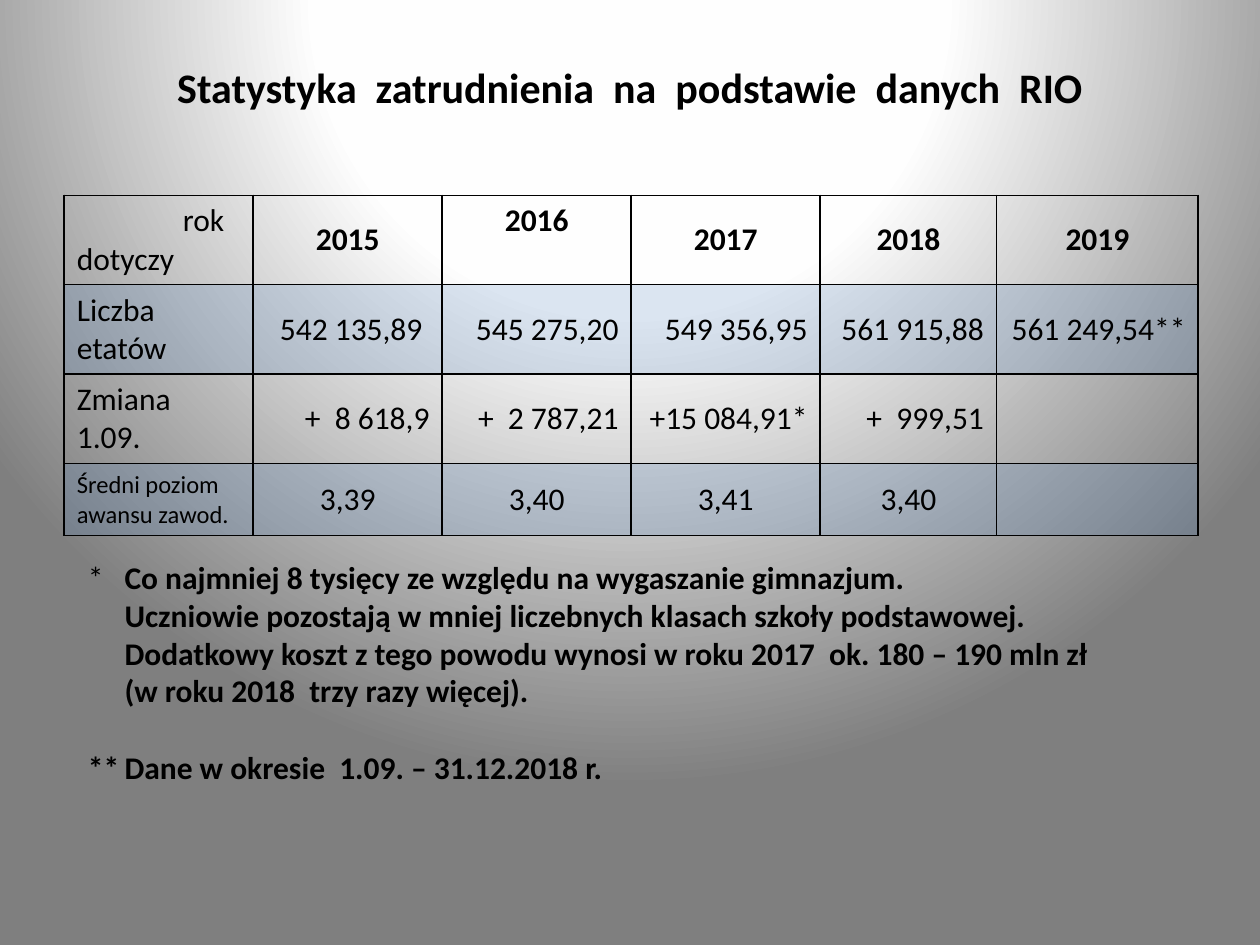
from lxml import etree
from pptx import Presentation
from pptx.dml.color import RGBColor
from pptx.enum.text import MSO_ANCHOR as Anchor, PP_ALIGN as Align
from pptx.oxml import parse_xml
from pptx.oxml.ns import nsdecls, qn
from pptx.util import Inches, Pt

BLACK = RGBColor(0x00, 0x00, 0x00)
BLUE = RGBColor(0x4F, 0x81, 0xBD)
WHITE = RGBColor(0xFF, 0xFF, 0xFF)
NEAR_WHITE = RGBColor(0xFE, 0xFE, 0xFE)
GRAY = RGBColor(0x7F, 0x7F, 0x7F)

HEADER = ["", "2015", "2016", "2017", "2018", "2019"]
JOBS = ["Liczba etatów", "542 135,89 ", "545 275,20", "549 356,95", "561 915,88", "561 249,54**"]
CHANGE = ["Zmiana\n1.09.", "+  8 618,9", "+  2 787,21", "+15 084,91*", "+  999,51", ""]
LEVEL = ["Średni poziom awansu zawod.", "3,39", "3,40", "3,41", "3,40", ""]
ROW_ALIGNS = [Align.CENTER, Align.RIGHT, Align.RIGHT, Align.CENTER]
NOTES = [
    ("*", "Co najmniej 8 tysięcy ze względu na wygaszanie gimnazjum."),
    ("", "Uczniowie pozostają w mniej liczebnych klasach szkoły podstawowej."),
    ("", "Dodatkowy koszt z tego powodu wynosi w roku 2017  ok. 180 – 190 mln zł"),
    ("", "(w roku 2018  trzy razy więcej)."),
    ("**", "Dane w okresie  1.09. – 31.12.2018 r."),
]


class Deck:
    font = "Calibri"
    size = 18

    def __init__(self, prs):
        self.s = prs.slides.add_slide(prs.slide_layouts[6])

    def style(self, font, size=None, bold=False):
        font.name = self.font
        font.size = Pt(size or self.size)
        font.bold = bold
        font.color.rgb = BLACK

    def background(self, stops):
        self.s.background.fill.gradient()
        old = self.s.element.find(".//" + qn("a:gradFill"))
        gs = "".join(f'<a:gs pos="{pos * 1000}"><a:srgbClr val="{color}"/></a:gs>'
                     for pos, color in stops)
        old.getparent().replace(old, parse_xml(
            f'<a:gradFill {nsdecls("a")} rotWithShape="1"><a:gsLst>{gs}</a:gsLst>'
            '<a:path path="circle"><a:fillToRect l="50000" t="-80000" r="50000" b="180000"/>'
            '</a:path></a:gradFill>'))

    def text_box(self, left, top, width, height, anchor=Anchor.TOP):
        sp = self.s.shapes.add_textbox(Inches(left), Inches(top), Inches(width), Inches(height))
        tf = sp.text_frame
        tf.word_wrap = True
        tf.vertical_anchor = anchor
        return tf

    def title(self, text):
        p = self.text_box(0.5, 0.3, 9, 0.77, Anchor.MIDDLE).paragraphs[0]
        p.text = text
        p.alignment = Align.CENTER
        self.style(p.font, 24, True)

    def notes(self, notes, hang):
        tf = self.text_box(0.6, 4.38, 8.9, 1.92)
        for i, (mark, text) in enumerate(notes):
            p = tf.paragraphs[0] if i == 0 else tf.add_paragraph()
            pPr = p._p.get_or_add_pPr()
            pPr.set("marL", str(Inches(hang)))
            pPr.set("indent", str(-Inches(hang) if mark else 0))
            if mark == "**":
                p.space_before = Pt(22)
            if mark:
                r = p.add_run()
                r.text = mark + "\t"
                self.style(r.font, bold=mark == "**")
            r = p.add_run()
            r.text = text
            self.style(r.font, bold=True)

    def table(self, left, top, cols, rows):
        tbl = self.s.shapes.add_table(len(rows), len(cols), Inches(left), Inches(top),
                                      Inches(sum(cols)), Inches(sum(rows))).table
        tbl.first_row = tbl.horz_banding = False
        for col, width in zip(tbl.columns, cols):
            col.width = Inches(width)
        for row, height in zip(tbl.rows, rows):
            row.height = Inches(height)
        return tbl

    def cell(self, cell, text, align, size=None, bold=False, anchor=Anchor.MIDDLE, tinted=False):
        cell.text = text
        cell.vertical_anchor = anchor
        for p in cell.text_frame.paragraphs:
            p.alignment = align
            self.style(p.font, size, bold)
        if tinted:
            cell.fill.solid()
            cell.fill.fore_color.rgb = BLUE
            color = cell._tc.tcPr.find(".//" + qn("a:srgbClr"))
            etree.SubElement(color, qn("a:alpha")).set("val", "20000")
        else:
            cell.fill.background()
        for i, side in enumerate("LRTB"):
            cell._tc.tcPr.insert(i, parse_xml(
                f'<a:ln{side} {nsdecls("a")} w="{Pt(1)}"><a:solidFill>'
                f'<a:srgbClr val="{BLACK}"/></a:solidFill></a:ln{side}>'))


def main():
    prs = Presentation()
    prs.slide_width, prs.slide_height = Inches(10), Inches(7.5)
    deck = Deck(prs)
    deck.background([(0, WHITE), (40, NEAR_WHITE), (100, GRAY)])
    deck.title("Statystyka  zatrudnienia  na  podstawie  danych  RIO")

    stats = deck.table(0.51, 1.55, [1.5, 1.5, 1.5, 1.5, 1.4, 1.6], [0.71, 0.71, 0.71, 0.57])
    for r, (values, align) in enumerate(zip([HEADER, JOBS, CHANGE, LEVEL], ROW_ALIGNS)):
        for c, text in enumerate(values):
            deck.cell(stats.cell(r, c), text, align if c else Align.LEFT,
                      size=14 if (r, c) == (3, 0) else None, bold=r == 0,
                      anchor=Anchor.TOP if text == "2016" else Anchor.MIDDLE,
                      tinted=r % 2 == 1)

    deck.notes(NOTES, 0.29)

    corner = deck.table(0.51, 1.55, [1.5], [0.71]).cell(0, 0)
    deck.cell(corner, "rok\ndotyczy", Align.LEFT, anchor=Anchor.TOP)
    corner.margin_right = Inches(0.23)
    corner.text_frame.paragraphs[0].alignment = Align.RIGHT

    prs.save("out.pptx")


if __name__ == "__main__":
    main()
